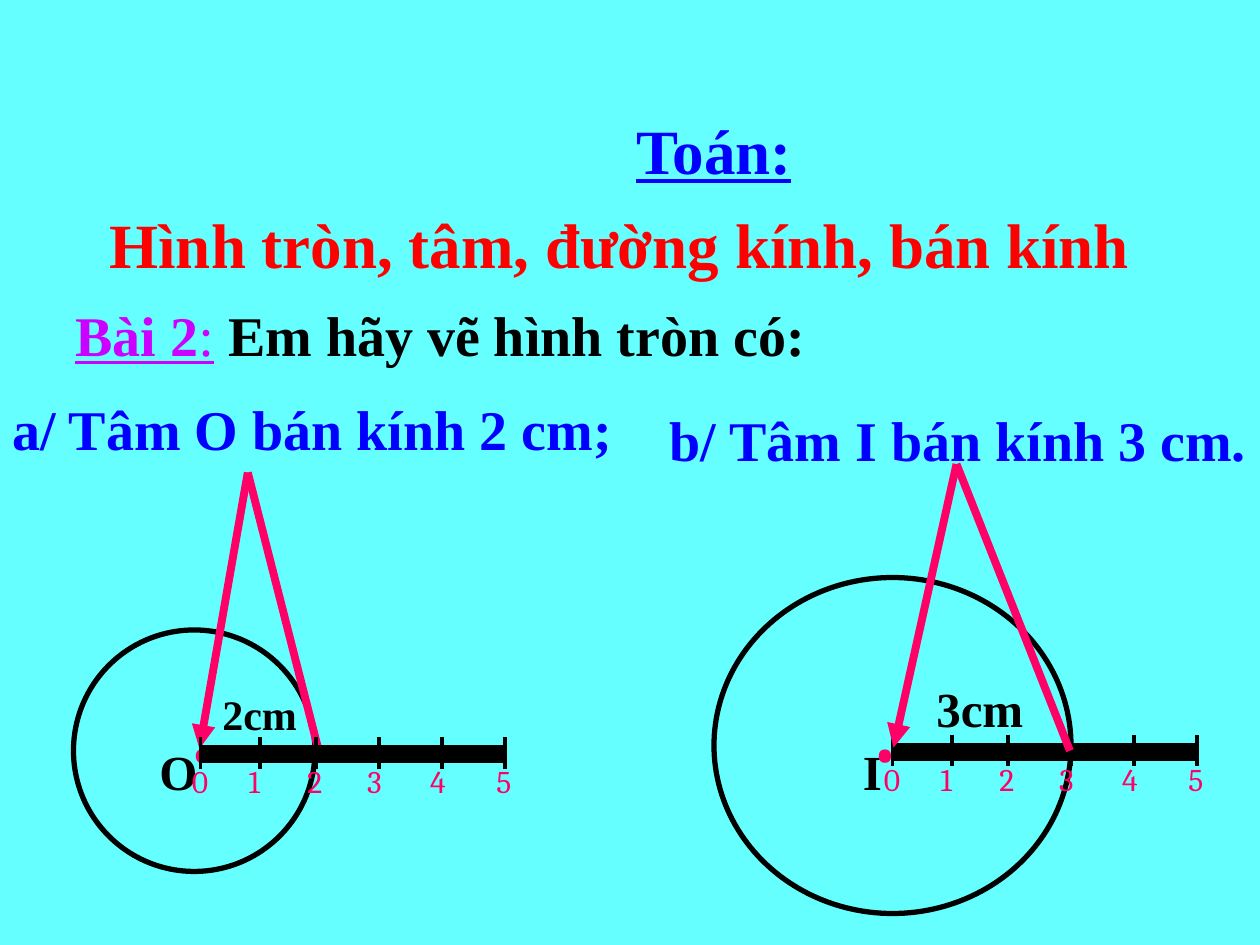
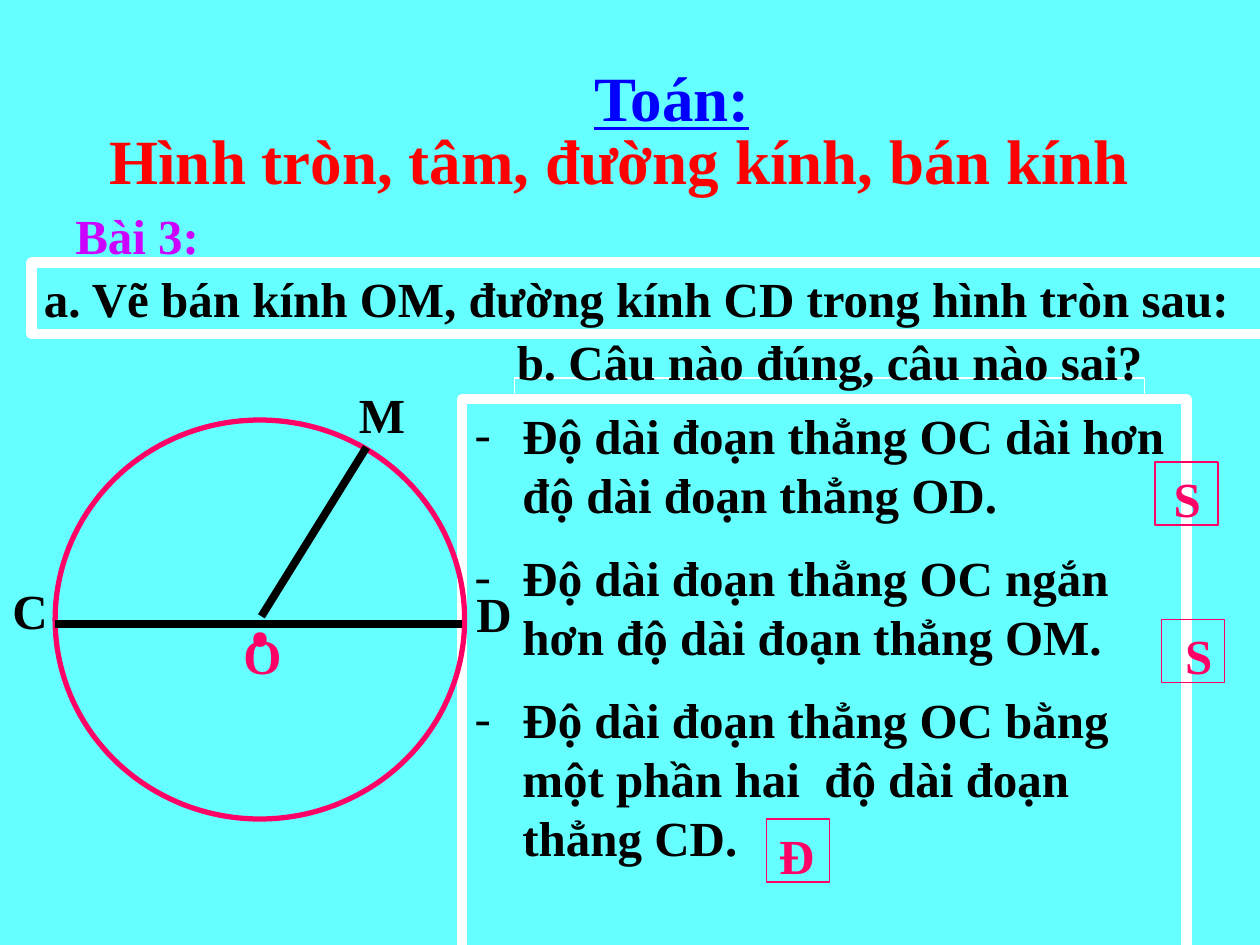
import lxml.etree
import pptx
import pptx.dml.color
import pptx.enum.shapes
import pptx.enum.text
import pptx.oxml.ns
import pptx.util

RGBColor = pptx.dml.color.RGBColor
SHAPES = pptx.enum.shapes.MSO_SHAPE
ALIGN = pptx.enum.text.PP_ALIGN
ANCHOR = pptx.enum.text.MSO_ANCHOR
qn = pptx.oxml.ns.qn

CYAN = RGBColor(0x66, 0xFF, 0xFF)
BLACK = RGBColor(0, 0, 0)
WHITE = RGBColor(0xFF, 0xFF, 0xFF)
RED = RGBColor(0xFF, 0, 0)
BLUE = RGBColor(0, 0, 0xFF)
PURPLE = RGBColor(0xCC, 0, 0xFF)
PINK = RGBColor(0xFF, 0, 0x66)

SERIF = "Times New Roman"
DIGIT_FONT = "Cambria"
COLUMNS, ROWS = 120, 90
TITLE_AND_BODY, TITLE_ONLY = 1, 5

TICKS = (0, 5.7, 11, 17, 23, 29)
TICK_LABELS = (-2, 3.4, 9, 14.7, 20.7, 27)
STATEMENTS = (
    "Độ dài đoạn thẳng OC dài hơn độ dài đoạn thẳng OD.",
    "Độ dài đoạn thẳng OC ngắn hơn độ dài đoạn thẳng OM.",
    "Độ dài đoạn thẳng OC bằng một phần hai  độ dài đoạn thẳng CD.",
)


class Lesson:
    def __init__(self):
        self.presentation = pptx.Presentation()
        self.presentation.slide_width = pptx.util.Inches(10)
        self.presentation.slide_height = pptx.util.Inches(7.5)
        self.slide = None

    def x(self, columns):
        return int(self.presentation.slide_width * columns / COLUMNS)

    def y(self, rows):
        return int(self.presentation.slide_height * rows / ROWS)

    def box(self, left, top, width, height):
        return self.x(left), self.y(top), self.x(width), self.y(height)

    def place(self, shape, left, top, width, height):
        shape.left, shape.top, shape.width, shape.height = self.box(left, top, width, height)

    def start_slide(self, layout, title_top, subject_left, subject_top):
        self.slide = self.presentation.slides.add_slide(self.presentation.slide_layouts[layout])
        self.slide.background.fill.solid()
        self.slide.background.fill.fore_color.rgb = CYAN
        title = self.slide.shapes.title
        self.place(title, -2, title_top, 122, 8.4)
        self.set_text(title, "Hình tròn, tâm, đường kính, bán kính", 36, RED,
                      align=ALIGN.CENTER)
        self.label("Toán:", subject_left, subject_top, 40, 8.4, 36, BLUE,
                   align=ALIGN.CENTER, underline=True)

    def format_run(self, run, size, color, font=SERIF, bold=True, underline=False):
        run.font.name = font
        run.font.size = pptx.util.Pt(size)
        run.font.color.rgb = color
        run.font.bold = bold
        run.font.underline = underline

    def set_text(self, shape, text, size, color, align=ALIGN.LEFT, **style):
        frame = shape.text_frame
        frame.text = text
        frame.word_wrap = True
        frame.auto_size = pptx.enum.text.MSO_AUTO_SIZE.NONE
        frame.vertical_anchor = ANCHOR.TOP
        if align == ALIGN.LEFT:
            frame.margin_right = 0
        for paragraph in frame.paragraphs:
            paragraph.alignment = align
            for run in paragraph.runs:
                self.format_run(run, size, color, **style)

    def label(self, text, left, top, width, height, size, color, **style):
        shape = self.slide.shapes.add_textbox(*self.box(left, top, width, height))
        self.set_text(shape, text, size, color, **style)
        return shape

    def outline(self, kind, left, top, width, height, color, weight):
        shape = self.slide.shapes.add_shape(kind, *self.box(left, top, width, height))
        shape.shadow.inherit = False
        shape.fill.background()
        shape.line.color.rgb = color
        shape.line.width = pptx.util.Pt(weight)
        return shape

    def line(self, start, end, color, weight, arrow=False):
        connector = self.slide.shapes.add_connector(
            pptx.enum.shapes.MSO_CONNECTOR.STRAIGHT,
            self.x(start[0]), self.y(start[1]), self.x(end[0]), self.y(end[1]))
        connector.line.color.rgb = color
        connector.line.width = pptx.util.Pt(weight)
        if arrow:
            tail = lxml.etree.SubElement(connector.line._get_or_add_ln(), qn("a:tailEnd"))
            tail.set("type", "triangle")
        lxml.etree.SubElement(connector._element.spPr, qn("a:effectLst"))

    def dot(self, left, top, width, height, size):
        self.label(".", left, top, width, height, size, PINK, font=DIGIT_FONT, bold=False)

    def ruler(self, left, top):
        self.line((left, top), (left + TICKS[-1], top), BLACK, 10)
        for number, (tick, label) in enumerate(zip(TICKS, TICK_LABELS)):
            self.line((left + tick, top - 1.6), (left + tick, top + 1.4), BLACK, 2.25)
            self.label(str(number), left + label, top + 0.2, 5, 4.8, 18, PINK,
                       font=DIGIT_FONT, bold=False)

    def compass(self, apex, needle, pencil):
        self.line(apex, needle, PINK, 4.5, arrow=True)
        self.line(apex, pencil, PINK, 4.5)

    def bullets(self, items, left, top, width, height):
        shape = self.slide.placeholders[1]
        self.place(shape, left, top, width, height)
        shape.line.color.rgb = WHITE
        shape.line.width = pptx.util.Pt(6)
        self.set_text(shape, "\n".join(items), 28, BLACK)
        for index, paragraph in enumerate(shape.text_frame.paragraphs):
            paragraph.space_before = pptx.util.Pt(14 if index else 0)
            properties = paragraph._p.get_or_add_pPr()
            properties.set("marL", str(pptx.util.Inches(0.38)))
            properties.set("indent", str(-pptx.util.Inches(0.38)))
            lxml.etree.SubElement(properties, qn("a:buFont")).set("typeface", SERIF)
            lxml.etree.SubElement(properties, qn("a:buChar")).set("char", "-")

    def answer(self, letter, left, top, offset=0):
        self.outline(SHAPES.RECTANGLE, left, top, 6, 6, PINK, 0.75)
        self.label(letter, left + offset, top, 7, 6.8, 28, PINK)


def build_drawing_slide(lesson):
    lesson.start_slide(TITLE_ONLY, 19, 48, 10)
    exercise = lesson.label("Bài 2", 6, 28, 77, 7.6, 32, PURPLE, underline=True)
    paragraph = exercise.text_frame.paragraphs[0]
    for text, color, bold in ((":", PURPLE, False), (" Em hãy vẽ hình tròn có:", BLACK, True)):
        run = paragraph.add_run()
        run.text = text
        lesson.format_run(run, 32, color, bold=bold, underline=not bold)
    lesson.label("a/ Tâm O bán kính 2 cm;", 0, 37, 59.5, 7.6, 32, BLUE)
    lesson.label("b/ Tâm I bán kính 3 cm.", 62.6, 38, 57.4, 7.6, 32, BLUE)

    lesson.dot(17, 61, 13, 14.4, 66)
    lesson.label("O", 14, 70, 8, 6.8, 28, BLACK)
    lesson.label("2cm", 20, 65, 12, 6, 24, BLACK)
    lesson.outline(SHAPES.OVAL, 7, 60, 23, 23, BLACK, 3)
    lesson.compass((23.6, 45), (19, 71.3), (30.3, 71.3))
    lesson.ruler(19.1, 71.8)

    lesson.outline(SHAPES.OVAL, 68, 55, 34, 32, BLACK, 3)
    lesson.label("3cm", 88, 64, 12, 6.8, 28, BLACK)
    lesson.label("I", 81, 70, 8, 6.8, 28, BLACK)
    lesson.ruler(85, 71.6)
    lesson.dot(82, 61, 5, 14.4, 66)
    lesson.compass((91.1, 44.2), (85.1, 71.2), (101.9, 71.5))


def build_true_false_slide(lesson):
    lesson.start_slide(TITLE_AND_BODY, 11, 44, 5)
    lesson.label("Bài 3:", 6, 19, 17, 6.8, 28, PURPLE, underline=True)
    task = lesson.outline(SHAPES.RECTANGLE, 3, 25, 120, 6.8, WHITE, 6)
    lesson.set_text(task, "a. Vẽ bán kính OM, đường kính CD trong hình tròn sau:", 28, BLACK)
    lesson.bullets(STATEMENTS, 44, 38, 69, 55)

    lesson.outline(SHAPES.OVAL, 5.25, 40, 39, 38, PINK, 3)
    lesson.line((5.25, 59.4), (44, 59.4), BLACK, 4.5)
    lesson.line((34.9, 42.6), (24.9, 58.7), BLACK, 4.5)
    lesson.label("O", 22, 59, 6, 6.8, 28, PINK)
    lesson.dot(22.4, 49, 9, 15.6, 72)
    for name, left, top in (("M", 33, 36), ("C", 0, 54.7), ("D", 44.2, 55)):
        lesson.label(name, left, top, 7, 6.8, 28, BLACK)

    lesson.outline(SHAPES.RECTANGLE, 49, 36, 60, 2, WHITE, 0.75)
    lesson.label("b. Câu nào đúng, câu nào sai?", 48, 31, 62, 6.8, 28, BLACK, align=ALIGN.CENTER)
    lesson.answer("S", 110, 44, 0.6)
    lesson.answer("S", 110.6, 59, 1.1)
    lesson.answer("Đ", 73, 78)


def main():
    lesson = Lesson()
    build_drawing_slide(lesson)
    build_true_false_slide(lesson)
    lesson.presentation.save("out.pptx")


if __name__ == "__main__":
    main()
